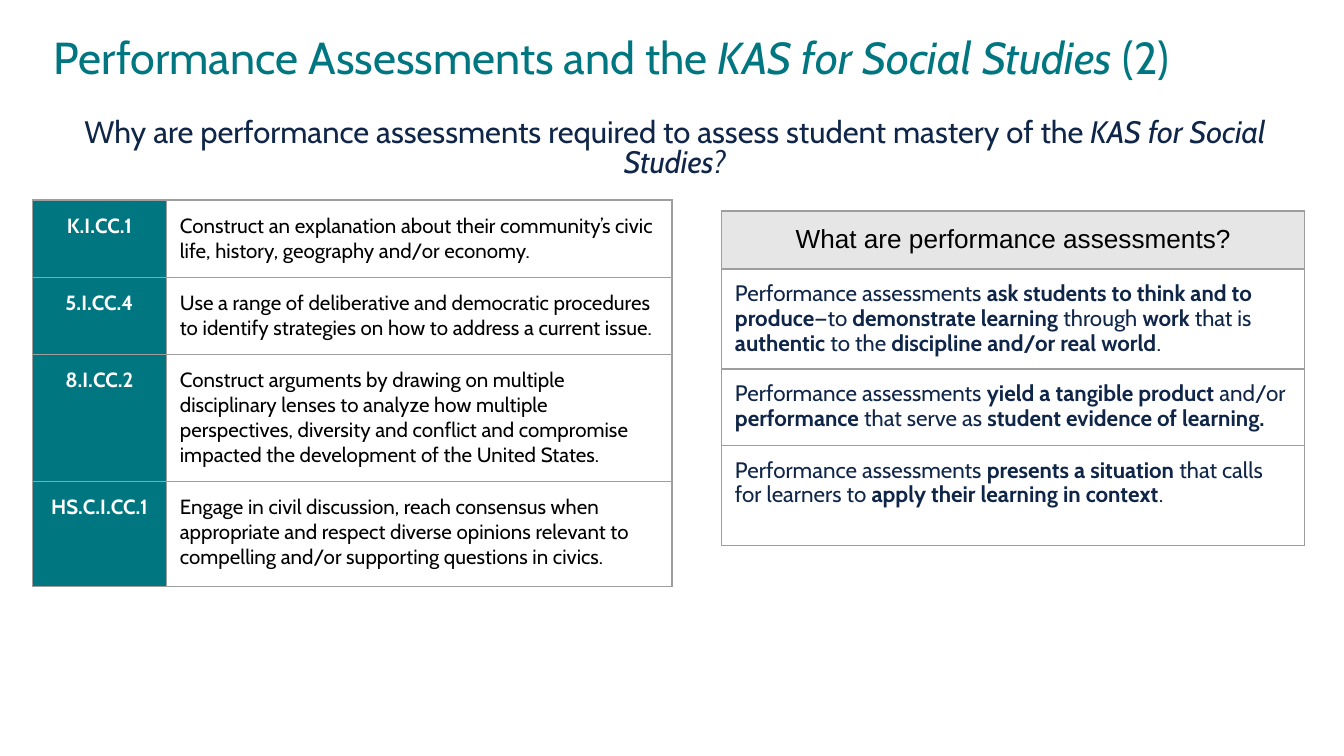
from lxml import etree
from pptx import Presentation, util as u
from pptx.dml.color import RGBColor
from pptx.enum import text
from pptx.oxml import ns

COLORS = {"teal": "007780", "navy": "102649", "white": "FFFFFF",
          "black": "000000", "gray": "E7E6E6", "border": "9E9E9E"}


def write(frame, content, size, color, font="Cabin", align="LEFT",
          spacing=1.0, bold=False, emphasis="bold", inset=(0.25, 0.25)):
    """Fill a text frame or cell; parts between asterisks get the emphasis."""
    frame.word_wrap = True
    frame.margin_left = frame.margin_right = u.Cm(inset[0])
    frame.margin_top = frame.margin_bottom = u.Cm(inset[1])
    body = getattr(frame, "text_frame", frame)
    para = body.paragraphs[0]
    para.alignment = getattr(text.PP_ALIGN, align)
    para.line_spacing = spacing
    for index, part in enumerate(content.split("*")):
        if not part:
            continue
        span = para.add_run()
        span.text = part
        span.font.name = font
        span.font.size = u.Pt(size)
        span.font.bold = bold
        span.font.color.rgb = RGBColor.from_string(COLORS[color])
        if index % 2:
            setattr(span.font, emphasis, True)


def style_cell(cell, fill=None):
    """Draw thin borders on all sides, then set the fill."""
    properties = cell._tc.get_or_add_tcPr()
    for side in ("lnL", "lnR", "lnT", "lnB"):
        line = etree.SubElement(properties, ns.qn(f"a:{side}"), w=str(u.Pt(0.75)))
        solid = etree.SubElement(line, ns.qn("a:solidFill"))
        etree.SubElement(solid, ns.qn("a:srgbClr"), val=COLORS["border"])
    if fill:
        cell.fill.solid()
        cell.fill.fore_color.rgb = RGBColor.from_string(COLORS[fill])
    else:
        cell.fill.background()


deck = Presentation()
deck.slide_width, deck.slide_height = u.Cm(25.4), u.Cm(14.29)
page = deck.slides.add_slide(deck.slide_layouts[6])

# Title and question
headings = [
    ("Performance Assessments and the *KAS for Social Studies* (2)",
     (0.84, 0.58, 24, 2.74), dict(size=24, color="teal", spacing=0.9)),
    ("Why are performance assessments required to assess student mastery "
     "of the *KAS for Social Studies?*",
     (0.84, 2.16, 23.83, 1.63),
     dict(size=16.6, color="navy", spacing=0.8, align="CENTER")),
]
for content, place, look in headings:
    box = page.shapes.add_textbox(*map(u.Cm, place))
    write(box.text_frame, content, emphasis="italic", inset=(0.18, 0.1), **look)

# Standards on the left, definitions on the right
standards = [
    ("K.I.CC.1", "Construct an explanation about their community’s civic life, "
     "history, geography and/or economy."),
    ("5.I.CC.4", "Use a range of deliberative and democratic procedures to "
     "identify strategies on how to address a current issue."),
    ("8.I.CC.2", "Construct arguments by drawing on multiple disciplinary lenses "
     "to analyze how multiple perspectives, diversity and conflict and "
     "compromise impacted the development of the United States."),
    ("HS.C.I.CC.1", "Engage in civil discussion, reach consensus when appropriate "
     "and respect diverse opinions relevant to compelling and/or supporting "
     "questions in civics."),
]
definitions = [
    ("What are performance assessments?",),
    ("Performance assessments *ask students to think and to produce*—to"
     "* demonstrate learning* through *work *that is *authentic *to the "
     "*discipline and/or real world*.",),
    ("Performance assessments *yield a tangible product* and/or *performance* "
     "that serve as *student evidence of learning.*",),
    ("Performance assessments *presents a situation* that calls for learners "
     "to *apply their learning in context*.",),
]
code = dict(size=11, color="white", bold=True, align="CENTER")
standard = dict(size=11, color="black")
header = dict(size=14, color="black", font="Arial", align="CENTER")
definition = dict(size=12, color="navy", spacing=0.9)

# Each table: rows, left, top, column widths, row heights, looks and fills by row
tables = [
    (standards, 0.61, 3.78, (2.54, 9.55), (1.46, 1.46, 2.4, 1.98),
     [[(code, "teal"), (standard, None)]] * 4),
    (definitions, 13.64, 3.99, (11.02,), (1.07, 1.89, 1.44, 1.89),
     [[(header, "gray")]] + [[(definition, None)]] * 3),
]
for rows, left, top, widths, heights, looks in tables:
    table = page.shapes.add_table(
        len(rows), len(widths), u.Cm(left), u.Cm(top),
        u.Cm(sum(widths)), u.Cm(sum(heights))).table
    table.first_row = table.horz_banding = False
    for column, width in zip(table.columns, widths):
        column.width = u.Cm(width)
    for row, height, contents, row_looks in zip(table.rows, heights, rows, looks):
        row.height = u.Cm(height)
        for cell, content, (look, fill) in zip(row.cells, contents, row_looks):
            style_cell(cell, fill)
            write(cell, content, **look)

deck.save("out.pptx")
